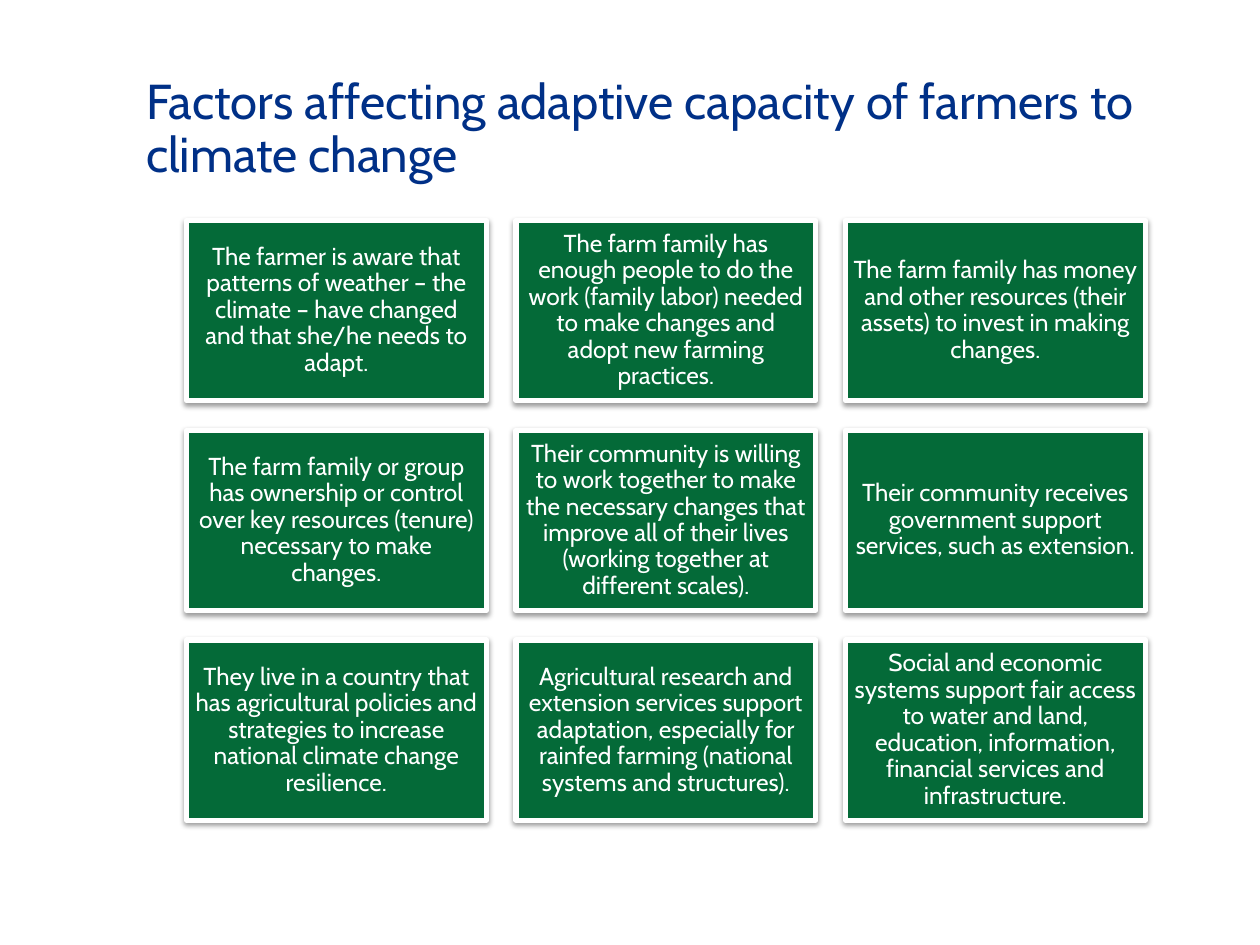
from lxml import etree
from pptx import Presentation
from pptx.dml.color import RGBColor
from pptx.enum.shapes import MSO_SHAPE
from pptx.enum.text import MSO_ANCHOR, PP_ALIGN
from pptx.oxml.ns import qn
from pptx.util import Inches, Pt

RECTANGLE = MSO_SHAPE.RECTANGLE
MIDDLE = MSO_ANCHOR.MIDDLE
LEFT, CENTER = PP_ALIGN.LEFT, PP_ALIGN.CENTER

FONT = "Cabin"
BLUE, GREEN, WHITE, BLACK = "003087", "046A38", "FFFFFF", "000000"

TITLE = "Factors affecting adaptive capacity of farmers to climate change"
FACTORS = [
    "The farmer is aware that patterns of weather – the climate – have changed "
    "and that she/he needs to adapt.",
    "The farm family has enough people to do the work (family labor) needed "
    "to make changes and adopt new farming practices.",
    "The farm family has money and other resources (their assets) to invest "
    "in making changes.",
    "The farm family or group has ownership or control over key resources "
    "(tenure) necessary to make changes.",
    "Their community is willing to work together to make the necessary changes "
    "that improve all of their lives (working together at different scales).",
    "Their community receives government support services, such as extension.",
    "They live in a country that has agricultural policies and strategies "
    "to increase national climate change resilience.",
    "Agricultural research and extension services support adaptation, "
    "especially for rainfed farming (national systems and structures).",
    "Social and economic systems support fair access to water and land, "
    "education, information, financial services and infrastructure.",
]

COLUMNS = 3
GRID_LEFT, GRID_TOP = 1.48, 1.75
CARD_WIDTH, CARD_HEIGHT = 2.38, 1.43
GAP = 0.235


def color(hex_string):
    return RGBColor.from_string(hex_string)


def write(shape, text, *, size, fill, align, inset_x, inset_y):
    frame = shape.text_frame
    frame.word_wrap = True
    frame.vertical_anchor = MIDDLE
    frame.margin_left = frame.margin_right = Inches(inset_x)
    frame.margin_top = frame.margin_bottom = Inches(inset_y)
    frame.text = text
    para = frame.paragraphs[0]
    para.alignment = align
    para.line_spacing = 0.9
    para.space_before = Pt(0)
    font = para.runs[0].font
    font.name, font.size, font.bold = FONT, Pt(size), False
    font.color.rgb = color(fill)


def add_drop_shadow(shape):
    shape.shadow.inherit = False
    effects = shape._element.spPr.find(qn("a:effectLst"))
    shadow = etree.SubElement(
        effects, qn("a:outerShdw"), blurRad=str(Pt(3.1)), dist=str(Pt(1.6)),
        dir=str(90 * 60000), rotWithShape="0")
    tint = etree.SubElement(shadow, qn("a:srgbClr"), val=BLACK)
    etree.SubElement(tint, qn("a:alpha"), val="38000")


def add_card(page, index, text):
    row, column = divmod(index, COLUMNS)
    card = page.shapes.add_shape(
        RECTANGLE,
        Inches(GRID_LEFT + column * (CARD_WIDTH + GAP)),
        Inches(GRID_TOP + row * (CARD_HEIGHT + GAP)),
        Inches(CARD_WIDTH), Inches(CARD_HEIGHT))
    card.fill.solid()
    card.fill.fore_color.rgb = color(GREEN)
    card.line.color.rgb = color(WHITE)
    card.line.width = Pt(3)
    add_drop_shadow(card)
    write(card, text, size=14, fill=WHITE, align=CENTER, inset_x=0.06, inset_y=0.06)


def main():
    deck = Presentation()
    deck.slide_width, deck.slide_height = Inches(10), Inches(7.5)
    page = deck.slides.add_slide(deck.slide_layouts[5])

    title = page.shapes.title
    title.left, title.top = Inches(1.06), Inches(0.52)
    title.width, title.height = Inches(8.44), Inches(1.03)
    write(title, TITLE, size=28, fill=BLUE, align=LEFT, inset_x=0.1, inset_y=0.05)

    for index, text in enumerate(FACTORS):
        add_card(page, index, text)

    deck.save("out.pptx")


if __name__ == "__main__":
    main()
